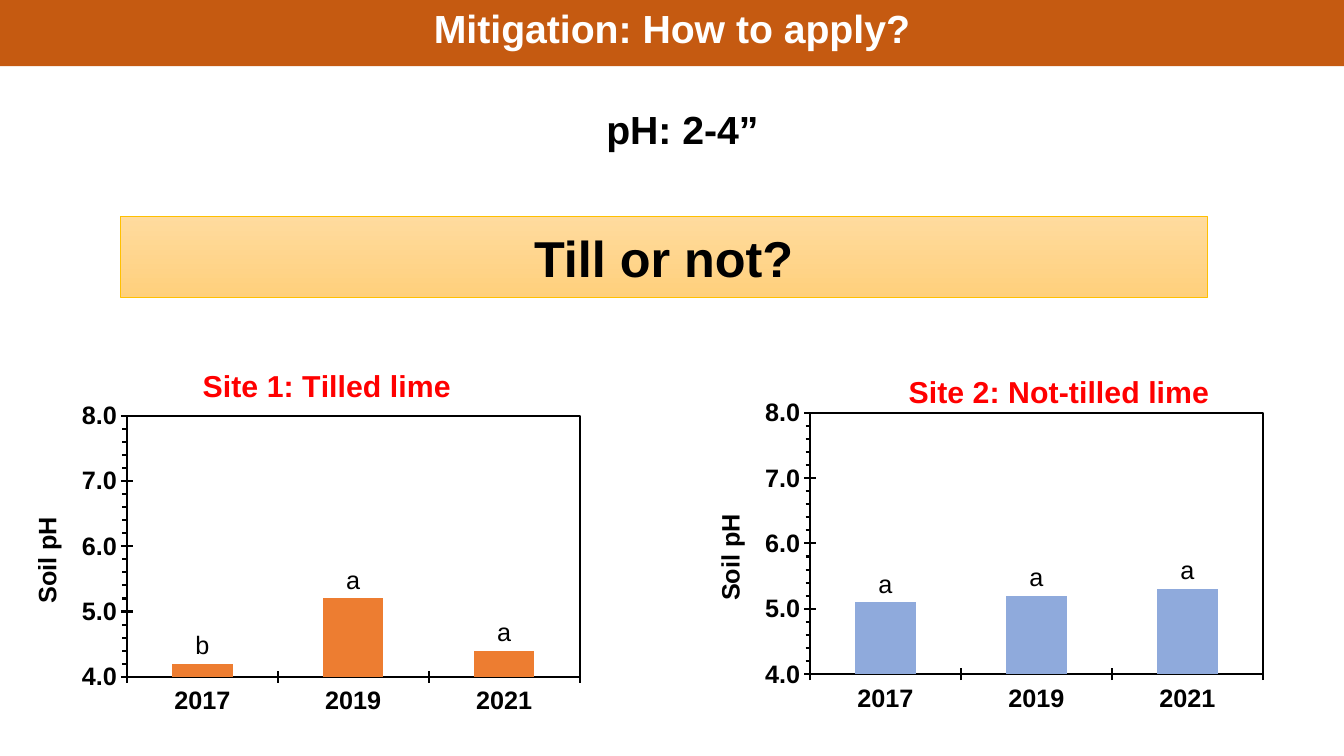
import pptx
import pptx.util
import pptx.chart.data
import pptx.dml.color
import pptx.enum.chart
import pptx.enum.shapes
import pptx.enum.text
import pptx.oxml
import pptx.oxml.ns

Pt = pptx.util.Pt
Tick = pptx.enum.chart.XL_TICK_MARK
Align = pptx.enum.text.PP_ALIGN
Mid = pptx.enum.text.MSO_ANCHOR.MIDDLE

# Content: boxes are left, top, width, height in points
HEAD = ("Mitigation: How to apply?", (0, -3.6, 960, 50.8))
DEPTH = ("pH: 2-4”", (426, 71.4, 125, 41))
ASK = ("Till or not?", (86, 154.8, 776.4, 57.6))
YEARS = ("2017", "2019", "2021")
SITES = [
    {"name": "Site 2: Not-tilled lime", "at": (506.4, 238), "title": (0.34, 0.08),
     "color": "8FAADC", "vals": (5.1, 5.2, 5.3), "marks": "aaa"},
    {"name": "Site 1: Tilled lime", "at": (18.4, 240), "title": (0.3, 0.06),
     "color": "ED7D31", "vals": (4.2, 5.2, 4.4), "marks": "baa"},
]
CHART = (408, 300)
PLOT = (0.177, 0.19, 0.793, 0.622)


def rgb(code):
    return pptx.dml.color.RGBColor.from_string(code)


def style(font, size, color="000000", bold=True):
    font.name, font.size, font.bold = "Arial", Pt(size), bold
    font.color.rgb = rgb(color)


def write(shape, text, size, color="000000", align=Align.CENTER):
    frame = shape.text_frame
    frame.text = text
    frame.vertical_anchor = Mid
    para = frame.paragraphs[0]
    para.alignment = align
    style(para.font, size, color)
    return para


def edge(line):
    line.color.rgb = rgb("000000")
    line.width = Pt(1.5)


def place(node, index, spots, inner=False):
    """Give a chart part a fixed place, in shares of the chart."""
    for old in node.findall(pptx.oxml.ns.qn("c:layout")):
        node.remove(old)
    tags = '<c:layoutTarget val="inner"/>' if inner else ""
    tags += '<c:xMode val="edge"/><c:yMode val="edge"/>'
    tags += "".join(f'<c:{key} val="{val}"/>' for key, val in zip("xywh", spots))
    node.insert(index, pptx.oxml.parse_xml(
        f'<c:layout {pptx.oxml.ns.nsdecls("c")}><c:manualLayout>{tags}'
        '</c:manualLayout></c:layout>'))


def label(title, text, size, color, spot):
    frame = title.text_frame
    frame.text = text
    style(frame.paragraphs[0].font, size, color)
    place(title._element, 1, spot)
    return frame


def draw(slide, site):
    data = pptx.chart.data.CategoryChartData()
    data.categories = YEARS
    data.add_series("Series 1", site["vals"])
    box = [Pt(n) for n in site["at"] + CHART]
    chart = slide.shapes.add_chart(
        pptx.enum.chart.XL_CHART_TYPE.COLUMN_CLUSTERED, *box, data).chart
    style(chart.font, 18)
    chart.has_legend = False
    label(chart.chart_title, site["name"], 21.6, "FF0000", site["title"])

    # Axes
    for axis in (chart.category_axis, chart.value_axis):
        axis.has_major_gridlines = False
        axis.major_tick_mark = Tick.CROSS
        style(axis.tick_labels.font, 18)
        edge(axis.format.line)
    axis.minimum_scale, axis.maximum_scale = 4, 8
    axis.major_unit, axis.minor_unit = 1, 0.2
    axis.minor_tick_mark = Tick.OUTSIDE
    axis.tick_labels.number_format = "0.0"
    axis.tick_labels.number_format_is_linked = False
    name = label(axis.axis_title, "Soil pH", 18, "000000", (0, 0.42))
    name._txBody.bodyPr.set("rot", "-5400000")
    name._txBody.bodyPr.set("vert", "horz")

    # Bars and their letters
    plot = chart.plots[0]
    plot.gap_width = 150
    plot.vary_by_categories = False
    bars = plot.series[0]
    bars.format.fill.solid()
    bars.format.fill.fore_color.rgb = rgb(site["color"])
    for i, mark in enumerate(site["marks"]):
        tag = bars.points[i].data_label
        tag.text_frame.text = mark
        style(tag.text_frame.paragraphs[0].runs[0].font, 18, bold=False)
        tag.position = pptx.enum.chart.XL_LABEL_POSITION.OUTSIDE_END

    # Plot frame
    area = chart._chartSpace.chart.plotArea
    place(area, 0, PLOT, inner=True)
    area.append(pptx.oxml.parse_xml(
        f'<c:spPr {pptx.oxml.ns.nsdecls("c", "a")}><a:noFill/>'
        f'<a:ln w="{Pt(1.5)}"><a:solidFill><a:srgbClr val="000000"/></a:solidFill>'
        '</a:ln></c:spPr>'))


def main():
    deck = pptx.Presentation()
    deck.slide_width, deck.slide_height = Pt(960), Pt(540)
    slide = deck.slides.add_slide(deck.slide_layouts[5])

    # Title bar
    head = slide.shapes.title
    head.left, head.top, head.width, head.height = [Pt(n) for n in HEAD[1]]
    head.fill.solid()
    head.fill.fore_color.rgb = rgb("C55A11")
    write(head, HEAD[0], 28, "FFFFFF").line_spacing = 0.9

    # Depth
    depth = slide.shapes.add_textbox(*[Pt(n) for n in DEPTH[1]])
    depth.text_frame.word_wrap = False
    write(depth, DEPTH[0], 28, align=Align.LEFT)

    for site in SITES:
        draw(slide, site)

    # Question banner
    ask = slide.shapes.add_shape(
        pptx.enum.shapes.MSO_SHAPE.RECTANGLE, *[Pt(n) for n in ASK[1]])
    ask.shadow.inherit = False
    ask.fill.gradient()
    ask.fill.gradient_angle = 270
    for stop, code in zip(ask.fill.gradient_stops, ("FFDB9E", "FFD07C")):
        stop.color.rgb = rgb(code)
    ask.line.color.rgb = rgb("FFC000")
    ask.line.width = Pt(0.5)
    write(ask, ASK[0], 36)

    deck.save("out.pptx")


if __name__ == "__main__":
    main()
